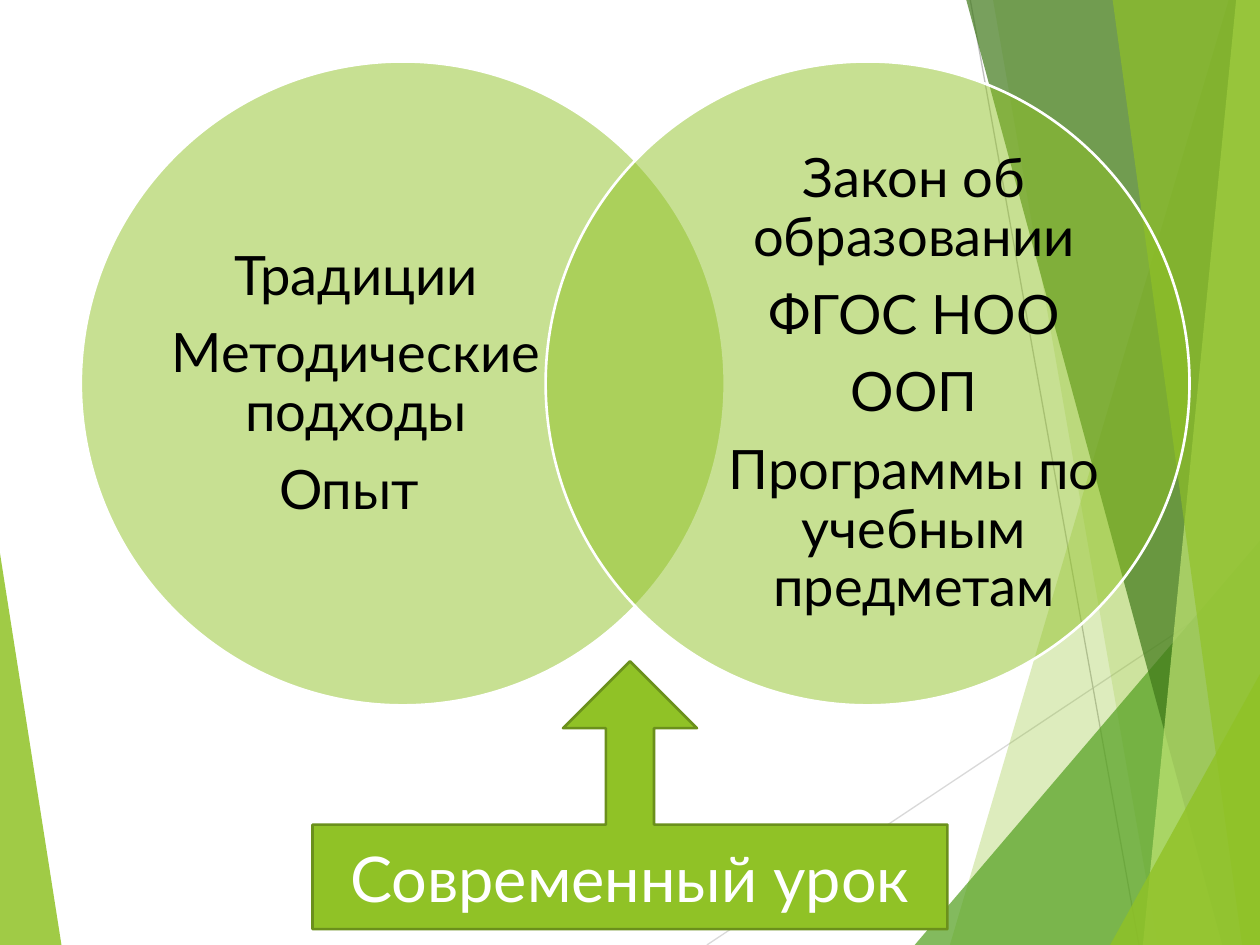
from lxml.etree import SubElement
from pptx import Presentation
from pptx.dml.color import RGBColor
from pptx.enum.shapes import MSO_CONNECTOR, MSO_SHAPE
from pptx.enum.text import MSO_ANCHOR, PP_ALIGN
from pptx.oxml.ns import qn
from pptx.util import Cm, Pt

WIDE, HIGH = 25.4, 19.05
FONT, GREEN = "Lato", "90C226"

RAYS = [
    ((14.25, HIGH), (WIDE, 11.63), "D9D9D9"),
    ((19.56, 0), (22.96, HIGH), "BFBFBF"),
]
# top point, bottom x, slide edge, colour, opacity
BANDS = [
    ((0, 11.15), 1.24, 0, GREEN, 85),
    ((24.77, 0), 19.15, WIDE, GREEN, 30),
    ((20.02, 0), 23.34, WIDE, GREEN, 20),
    ((WIDE, 10.9), 18.44, WIDE, "54A021", 72),
    ((19.48, 0), 24.64, WIDE, "3F7819", 70),
    ((24.92, 0), 23.04, WIDE, "C0E474", 70),
    ((22.43, 0), 25.04, WIDE, GREEN, 65),
    ((WIDE, 13.59), 22.38, WIDE, GREEN, 80),
]
CIRCLES = [
    (1.63, 3.43, ["Традиции", "Методические подходы", "Опыт "]),
    (11, 14.68, ["Закон об образовании", "ФГОС НОО", "ООП",
                 "Программы по учебным предметам"]),
]
LESSON = "Современный урок"


def tint(part, code):
    part.rgb = RGBColor.from_string(code)


def paint(shape, code, alpha=100, edge=None):
    shape.shadow.inherit = False
    shape.fill.solid()
    tint(shape.fill.fore_color, code)
    if alpha < 100:
        tone = shape.fill._xPr.find(qn("a:solidFill"))[0]
        SubElement(tone, qn("a:alpha"), val=str(alpha * 1000))
    if edge:
        tint(shape.line.color, edge)
        shape.line.width = Pt(1.5)
    else:
        shape.line.fill.background()


def write(frame, lines, size, code):
    frame.word_wrap = True
    frame.vertical_anchor = MSO_ANCHOR.MIDDLE
    for i, line in enumerate(lines):
        para = frame.add_paragraph() if i else frame.paragraphs[0]
        para.text = line
        para.alignment = PP_ALIGN.CENTER
        para.font.name = FONT
        para.font.size = Pt(size)
        tint(para.font.color, code)


def add_ray(shapes, start, end, code):
    ray = shapes.add_connector(
        MSO_CONNECTOR.STRAIGHT, *(Cm(v) for v in start + end))
    tint(ray.line.color, code)
    ray.line.width = Pt(0.75)
    SubElement(ray._element.spPr, qn("a:effectLst"))


def add_band(shapes, top, foot, side, code, alpha):
    pen = shapes.build_freeform(Cm(top[0]), Cm(top[1]))
    ends = [(foot, HIGH), (side, HIGH), (side, top[1])]
    pen.add_line_segments([(Cm(x), Cm(y)) for x, y in ends])
    paint(pen.convert_to_shape(), code, alpha)


def add_circle(shapes, left, inset, lines):
    disc = shapes.add_shape(
        MSO_SHAPE.OVAL, Cm(left), Cm(1.24), Cm(12.98), Cm(12.98))
    paint(disc, GREEN, 50, "FFFFFF")
    frame = shapes.add_textbox(
        Cm(inset), Cm(2.79), Cm(7.49), Cm(9.93)).text_frame
    frame.margin_left = frame.margin_right = 0
    frame.margin_top = frame.margin_bottom = 0
    write(frame, lines, 31, "000000")
    for para in frame.paragraphs:
        para.line_spacing = 0.9
        para.space_after = Pt(10.85)


def main():
    deck = Presentation()
    deck.slide_width, deck.slide_height = Cm(WIDE), Cm(HIGH)
    shapes = deck.slides.add_slide(deck.slide_layouts[6]).shapes
    for ray in RAYS:
        add_ray(shapes, *ray)
    for band in BANDS:
        add_band(shapes, *band)
    for circle in CIRCLES:
        add_circle(shapes, *circle)
    call = shapes.add_shape(
        MSO_SHAPE.UP_ARROW_CALLOUT, Cm(6.3), Cm(13.33), Cm(12.8), Cm(5.4))
    for i, value in enumerate([0.18, 0.25, 0.25, 0.39]):
        call.adjustments[i] = value
    paint(call, GREEN, edge="6B901C")
    write(call.text_frame, [LESSON], 36, "FFFFFF")
    deck.save("out.pptx")


if __name__ == "__main__":
    main()
